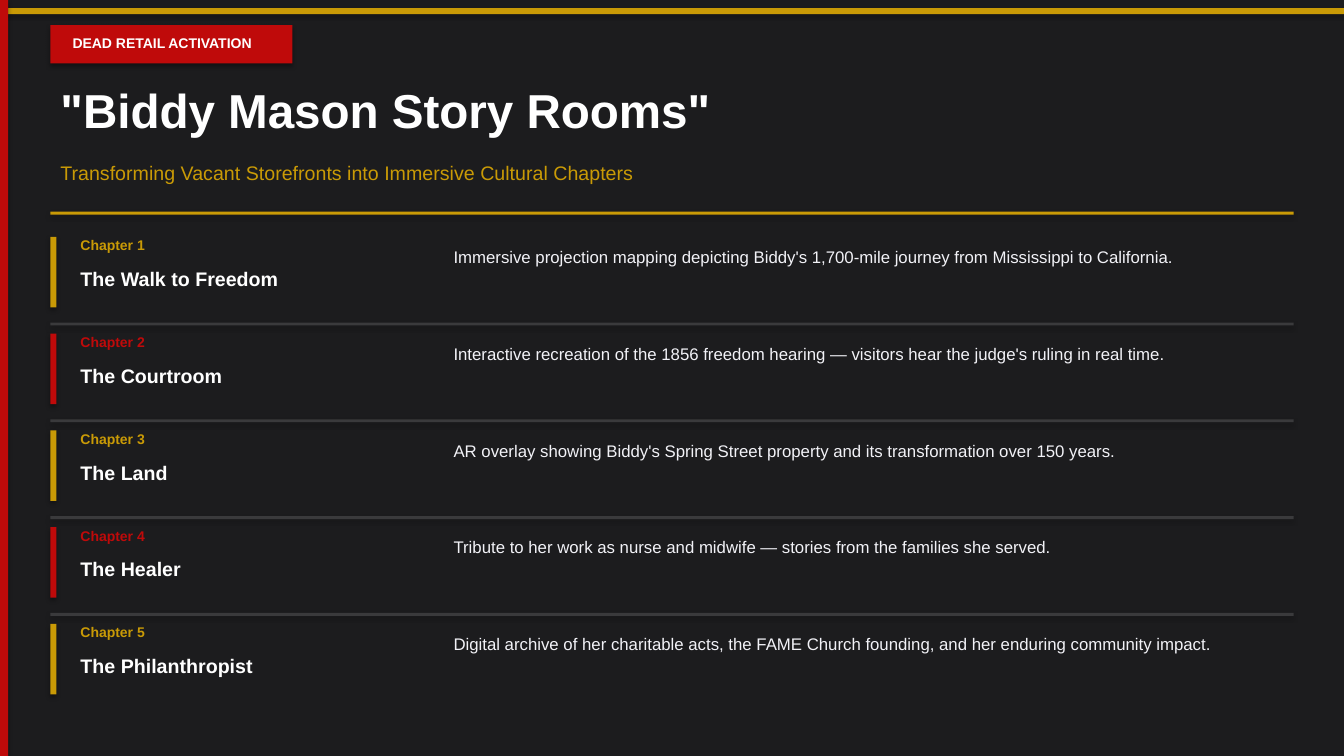
"""Build the "Biddy Mason Story Rooms" slide with its five chapters."""
from pptx import Presentation
from pptx.dml.color import RGBColor
from pptx.enum.shapes import MSO_SHAPE
from pptx.enum.text import MSO_ANCHOR, MSO_AUTO_SIZE, PP_ALIGN
from pptx.util import Inches, Pt

BADGE = "DEAD RETAIL ACTIVATION"
TITLE = "\"Biddy Mason Story Rooms\""
SUBTITLE = "Transforming Vacant Storefronts into Immersive Cultural Chapters"
CHAPTERS = [
    ("The Walk to Freedom",
     "Immersive projection mapping depicting Biddy's 1,700-mile journey from Mississippi to California."),
    ("The Courtroom",
     "Interactive recreation of the 1856 freedom hearing — visitors hear the judge's ruling in real time."),
    ("The Land",
     "AR overlay showing Biddy's Spring Street property and its transformation over 150 years."),
    ("The Healer",
     "Tribute to her work as nurse and midwife — stories from the families she served."),
    ("The Philanthropist",
     "Digital archive of her charitable acts, the FAME Church founding, and her enduring community impact."),
]
COLORS = {
    "background": "1C1C1E",
    "gold": "C99A06",
    "red": "BF0A0A",
    "white": "FFFFFF",
    "text": "F2F2F7",
    "divider": "3A3A3C",
}
FONT = "Arial"
WIDTH, HEIGHT = 13.33, 7.5
LEFT, RULE_WIDTH, RULE_HEIGHT = 0.5, 12.33, 0.03
FIRST_ROW, ROW_PITCH = 2.3, 0.96


def color(name):
    return RGBColor.from_string(COLORS[name])


def write(shape, text, size, color_name, bold=False):
    frame = shape.text_frame
    frame.word_wrap = True
    frame.auto_size = MSO_AUTO_SIZE.NONE
    frame.vertical_anchor = MSO_ANCHOR.TOP
    frame.text = text
    paragraph = frame.paragraphs[0]
    paragraph.alignment = PP_ALIGN.LEFT
    font = paragraph.font
    font.name, font.size, font.bold = FONT, Pt(size), bold
    font.color.rgb = color(color_name)


def add_bar(slide, left, top, width, height, color_name):
    shape = slide.shapes.add_shape(
        MSO_SHAPE.RECTANGLE, Inches(left), Inches(top), Inches(width), Inches(height))
    shape.fill.solid()
    shape.fill.fore_color.rgb = color(color_name)
    shape.line.fill.background()
    return shape


def add_text(slide, left, top, width, height, *style):
    box = slide.shapes.add_textbox(
        Inches(left), Inches(top), Inches(width), Inches(height))
    write(box, *style)


def add_header(slide):
    add_bar(slide, 0, 0.08, WIDTH, 0.06, "gold")
    add_bar(slide, 0, 0, 0.08, HEIGHT, "red")

    badge = add_bar(slide, LEFT, 0.25, 2.4, 0.38, "red")
    write(badge, BADGE, 10, "white", True)
    badge.text_frame.margin_left = Inches(0.22)
    badge.text_frame.margin_top = Inches(0.09)

    title = slide.shapes.title
    title.left, title.top = Inches(LEFT), Inches(0.75)
    title.width, title.height = Inches(8.5), Inches(0.75)
    write(title, TITLE, 34, "white", True)

    add_text(slide, LEFT, 1.55, 8.5, 0.45, SUBTITLE, 14, "gold")
    add_bar(slide, LEFT, 2.1, RULE_WIDTH, RULE_HEIGHT, "gold")


def add_chapter(slide, index, name, description):
    top = FIRST_ROW + index * ROW_PITCH
    accent = ("gold", "red")[index % 2]
    add_bar(slide, LEFT, top + 0.05, 0.06, 0.7, accent)
    add_text(slide, 0.7, top, 1.5, 0.35, f"Chapter {index + 1}", 10, accent, True)
    add_text(slide, 0.7, top + 0.3, 3.5, 0.4, name, 14, "white", True)
    add_text(slide, 4.4, top + 0.1, 8.5, 0.75, description, 12, "text")
    if index < len(CHAPTERS) - 1:
        add_bar(slide, LEFT, top + 0.9, RULE_WIDTH, RULE_HEIGHT, "divider")


def main():
    presentation = Presentation()
    presentation.slide_width, presentation.slide_height = Inches(WIDTH), Inches(HEIGHT)
    slide = presentation.slides.add_slide(presentation.slide_layouts.get_by_name("Title Only"))
    slide.background.fill.solid()
    slide.background.fill.fore_color.rgb = color("background")
    add_header(slide)
    for index, (name, description) in enumerate(CHAPTERS):
        add_chapter(slide, index, name, description)
    presentation.save("out.pptx")


if __name__ == "__main__":
    main()
